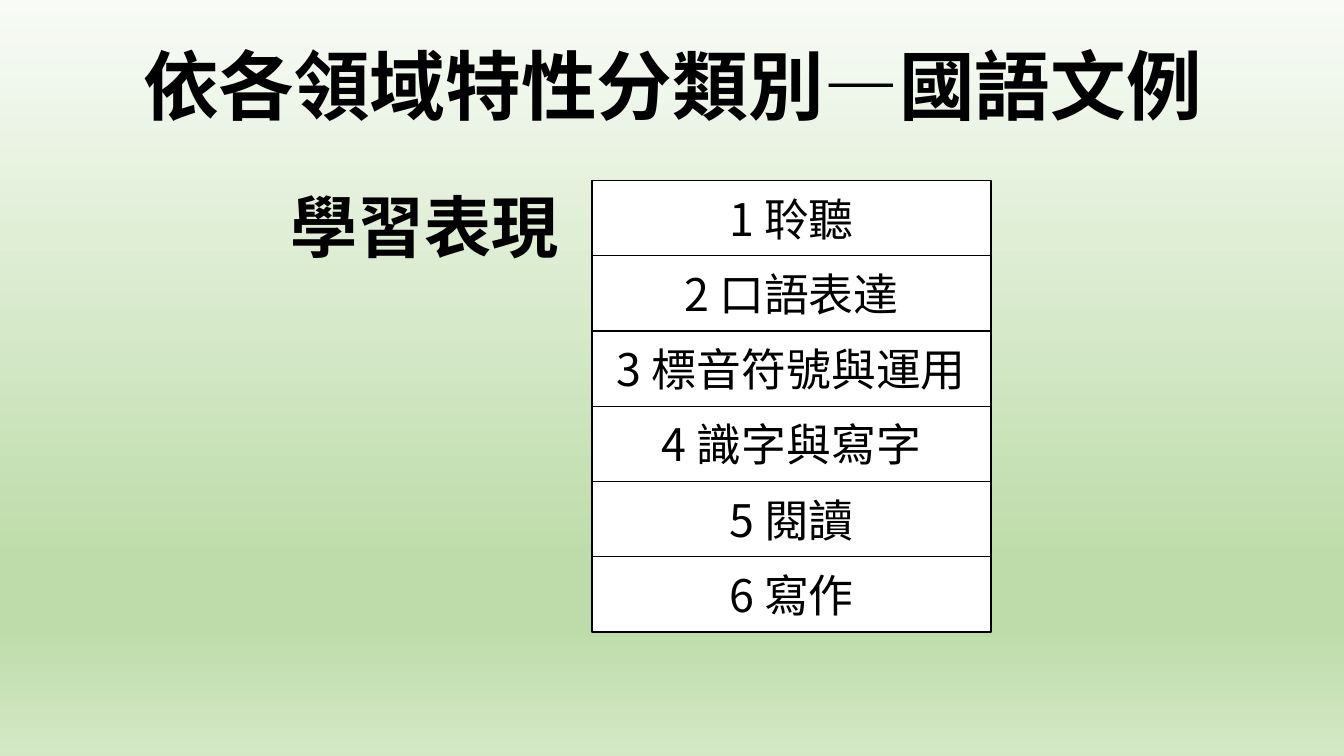
from lxml import etree
from pptx import Presentation, util as u
from pptx.dml.color import RGBColor
from pptx.enum import shapes, text
from pptx.oxml.ns import qn

WIDTH, HEIGHT = 13.33, 7.5
FONT = "Noto Sans CJK SC"
BLACK, WHITE = "000000", "FFFFFF"
GRADIENT = [(0, "F8FBF6"), (74, "BEDCAA"), (83, "BEDCAA"), (100, "D4E8C6")]
CATEGORIES = ["聆聽", "口語表達", "標音符號與運用", "識字與寫字", "閱讀", "寫作"]


def color(value):
    """Turn a hex string into a colour."""
    return RGBColor.from_string(value)


def write(shape, content, size, bold=False, align=text.PP_ALIGN.CENTER):
    """Put one formatted paragraph into a shape."""
    shape.text_frame.text = content
    paragraph = shape.text_frame.paragraphs[0]
    paragraph.alignment = align
    run = paragraph.runs[0]
    run.font.size = u.Pt(size)
    run.font.bold = bold
    run.font.name = FONT
    run.font.color.rgb = color(BLACK)
    east_asian = etree.SubElement(run.font._element, qn("a:ea"))
    east_asian.set("typeface", FONT)
    return paragraph


def add_rectangle(slide, left, top, width, height):
    """Add a rectangle without a shadow."""
    shape = slide.shapes.add_shape(
        shapes.MSO_SHAPE.RECTANGLE, *map(u.Inches, (left, top, width, height)))
    shape.shadow.inherit = False
    return shape


def add_backdrop(slide):
    """Cover the slide with a vertical green gradient."""
    shape = add_rectangle(slide, 0, 0, WIDTH, HEIGHT)
    shape.line.fill.background()
    shape.fill.gradient()
    shape.fill.gradient_angle = 270
    stops = next(shape.element.spPr.iter(qn("a:gsLst")))
    for stop in list(stops):
        stops.remove(stop)
    for position, value in GRADIENT:
        stop = etree.SubElement(stops, qn("a:gs"), pos=str(position * 1000))
        etree.SubElement(stop, qn("a:srgbClr"), val=value)


def add_title(slide, left, top, width, height):
    """Add the centred slide title."""
    box = slide.shapes.add_textbox(*map(u.Inches, (left, top, width, height)))
    box.text_frame.word_wrap = True
    box.text_frame.vertical_anchor = text.MSO_ANCHOR.MIDDLE
    write(box, "依各領域特性分類別—國語文例", 54, True).line_spacing = 0.9


def add_label(slide, left, top, width, height):
    """Add the heading beside the list."""
    box = slide.shapes.add_textbox(*map(u.Inches, (left, top, width, height)))
    box.text_frame.word_wrap = False
    box.text_frame.auto_size = text.MSO_AUTO_SIZE.SHAPE_TO_FIT_TEXT
    write(box, "學習表現", 48, True, text.PP_ALIGN.LEFT)


def add_categories(slide, left, top, width, height):
    """Stack the numbered categories in equal rows."""
    row_height = height / len(CATEGORIES)
    for row, category in enumerate(CATEGORIES):
        shape = add_rectangle(
            slide, left, top + row * row_height, width, row_height)
        shape.fill.solid()
        shape.fill.fore_color.rgb = color(WHITE)
        shape.line.color.rgb = color(BLACK)
        shape.line.width = u.Pt(1)
        shape.text_frame.word_wrap = True
        shape.text_frame.vertical_anchor = text.MSO_ANCHOR.MIDDLE
        write(shape, f"{row + 1} {category}", 32)


def main():
    """Build and save the slide."""
    presentation = Presentation()
    presentation.slide_width = u.Inches(WIDTH)
    presentation.slide_height = u.Inches(HEIGHT)
    slide = presentation.slides.add_slide(presentation.slide_layouts[6])
    add_backdrop(slide)
    add_title(slide, 0.89, 0.17, 11.56, 1.45)
    add_categories(slide, 5.87, 1.79, 3.96, 4.48)
    add_label(slide, 2.78, 1.79, 2.89, 0.91)
    presentation.save("out.pptx")


if __name__ == "__main__":
    main()
